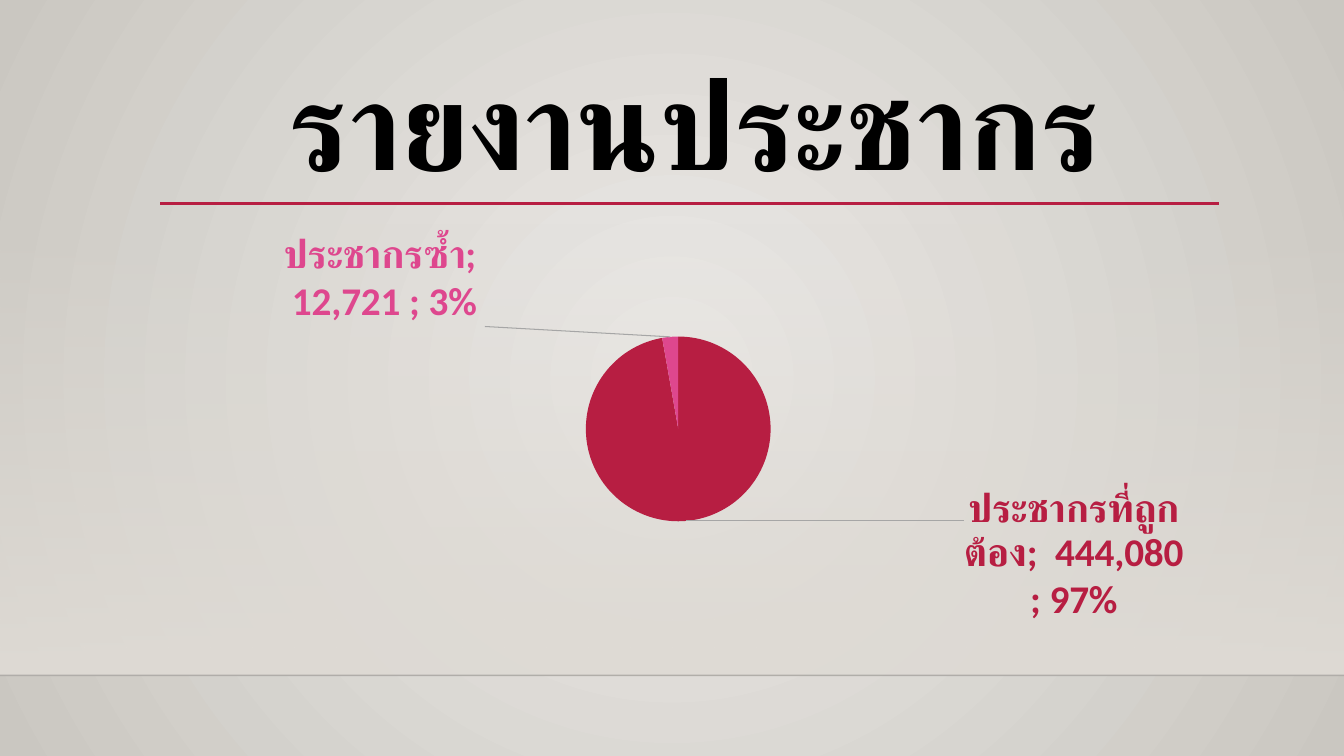
from lxml.etree import SubElement
from pptx import Presentation
from pptx.chart.data import CategoryChartData
from pptx.dml.color import RGBColor
from pptx.enum.chart import XL_CHART_TYPE as ChartType, XL_LABEL_POSITION as LabelPosition
from pptx.enum.shapes import MSO_CONNECTOR as Connector, MSO_SHAPE as Shape
from pptx.enum.text import MSO_ANCHOR as Anchor, MSO_AUTO_SIZE as AutoSize, PP_ALIGN as Align
from pptx.oxml import parse_xml
from pptx.oxml.ns import nsdecls, qn
from pptx.util import Pt

WIDTH, HEIGHT = 960, 540
CRIMSON, PINK, BLACK, GREY = "B71E42", "DE478E", "000000", "A6A6A6"
COUNT_FORMAT = r'_(* #,##0_);_(* \(#,##0\);_(* "-"_);_(@_)'


def colour(hex_text):
    return RGBColor.from_string(hex_text)


def layout_xml(x, y, size=None, inner=False):
    target = '<c:layoutTarget val="inner"/><c:xMode val="edge"/><c:yMode val="edge"/>' if inner else ""
    extent = f'<c:w val="{size[0]}"/><c:h val="{size[1]}"/>' if size else ""
    return parse_xml(
        f'<c:layout {nsdecls("c")}><c:manualLayout>{target}'
        f'<c:x val="{x}"/><c:y val="{y}"/>{extent}</c:manualLayout></c:layout>')


class Deck:
    """Holds the style and the current slide, and adds each kind of element."""

    font = "Calibri"

    def __init__(self):
        self.presentation = Presentation()
        self.presentation.slide_width, self.presentation.slide_height = Pt(WIDTH), Pt(HEIGHT)
        self.slide = self.presentation.slides.add_slide(self.presentation.slide_layouts[5])

    def style(self, font, size, hex_text, bold=True):
        font.name, font.size, font.bold = self.font, Pt(size), bold
        font.color.rgb = colour(hex_text)

    def gradient(self, fill, start, end):
        fill.gradient()
        for position, (stop, hex_text) in enumerate(zip(fill.gradient_stops, (start, end))):
            stop.color.rgb = colour(hex_text)
            stop.position = position

    def background(self, centre, edge):
        self.gradient(self.slide.background.fill, centre, edge)
        gradient = self.slide.background._cSld.find(".//" + qn("a:gradFill"))
        gradient.replace(gradient.find(qn("a:lin")), parse_xml(
            f'<a:path {nsdecls("a")} path="circle">'
            '<a:fillToRect l="50000" t="50000" r="50000" b="50000"/></a:path>'))

    def fade(self, left, top, width, height, hex_text):
        wall = self.slide.shapes.add_shape(
            Shape.RECTANGLE, Pt(left), Pt(top), Pt(width), Pt(height))
        wall.shadow.inherit = False
        wall.line.fill.background()
        self.gradient(wall.fill, hex_text, hex_text)
        gradient = wall._element.spPr.find(qn("a:gradFill"))
        gradient.find(qn("a:lin")).set("ang", "5400000")
        SubElement(gradient.find(qn("a:gsLst"))[0][0], qn("a:alpha")).set("val", "0")

    def rule(self, left, right, y, hex_text, weight, opacity=100):
        line = self.slide.shapes.add_connector(
            Connector.STRAIGHT, Pt(left), Pt(y), Pt(right), Pt(y))
        line.line.color.rgb, line.line.width = colour(hex_text), Pt(weight)
        properties = line._element.spPr
        if opacity < 100:
            SubElement(properties.find(".//" + qn("a:srgbClr")), qn("a:alpha")).set(
                "val", str(opacity * 1000))
        SubElement(properties, qn("a:effectLst"))

    def title(self, text, left, top, width, height):
        heading = self.slide.shapes.title
        heading.left, heading.top, heading.width, heading.height = map(
            Pt, (left, top, width, height))
        frame = heading.text_frame
        frame.text = text
        frame.auto_size, frame.vertical_anchor = AutoSize.NONE, Anchor.TOP
        paragraph = frame.paragraphs[0]
        paragraph.alignment, paragraph.line_spacing = Align.CENTER, 0.9
        self.style(paragraph.font, 88, BLACK)

    def pie(self, slices, left, top, width, height, plot):
        data = CategoryChartData(number_format=COUNT_FORMAT)
        data.categories = [name for name, *_ in slices]
        data.add_series("Series 1", [count for _, count, *_ in slices])
        chart = self.slide.shapes.add_chart(
            ChartType.PIE, Pt(left), Pt(top), Pt(width), Pt(height), data).chart
        chart.has_legend = chart.has_title = False
        self.style(chart.font, 10, BLACK, bold=False)
        area = chart._chartSpace.find(".//" + qn("c:plotArea"))
        for old in area.findall(qn("c:layout")):
            area.remove(old)
        x, y, diameter = plot
        area.insert(0, layout_xml(
            x / width, y / height, (diameter / width, diameter / height), inner=True))
        chart.plots[0].vary_by_categories = True
        series = chart.plots[0].series[0]
        labels = series.data_labels
        labels.show_value = labels.show_category_name = labels.show_percentage = True
        labels.position = LabelPosition.OUTSIDE_END
        self.style(labels.font, 20, CRIMSON)
        for index, (_, _, hex_text, offset, size) in enumerate(slices):
            point = series.points[index]
            point.format.fill.solid()
            point.format.fill.fore_color.rgb = colour(hex_text)
            self.style(point.data_label.font, 28, hex_text)
            point.data_label.position = LabelPosition.OUTSIDE_END
            self.place_label(labels._element.findall(qn("c:dLbl"))[index], offset, size)
        self.leaders(labels._element)

    def leaders(self, labels):
        for old in labels.findall(qn("c:showLeaderLines")):
            labels.remove(old)
        SubElement(labels, qn("c:showLeaderLines")).set("val", "1")
        labels.append(parse_xml(
            f'<c:leaderLines {nsdecls("c", "a")}><c:spPr><a:ln w="{Pt(0.75)}"><a:solidFill>'
            f'<a:srgbClr val="{GREY}"/></a:solidFill></a:ln></c:spPr></c:leaderLines>'))

    def place_label(self, label, offset, size):
        for part in ("showVal", "showCatName", "showPercent"):
            label.find(qn("c:" + part)).set("val", "1")
        label.insert(1, layout_xml(*offset))
        SubElement(label, qn("c:separator")).text = "; "
        extension = SubElement(SubElement(label, qn("c:extLst")), qn("c:ext"))
        extension.set("uri", "{CE6537A1-D6FC-4f65-9D91-7224C49458BB}")
        extension.append(parse_xml(
            '<c15:layout xmlns:c15="http://schemas.microsoft.com/office/drawing/2012/chart" '
            f'{nsdecls("c")}><c:manualLayout><c:w val="{size[0]}"/><c:h val="{size[1]}"/>'
            '</c:manualLayout></c15:layout>'))


def main():
    deck = Deck()
    deck.background("ECEAE7", "CAC7C1")
    deck.fade(0, 159, WIDTH, 323.5, "DFDBD5")
    deck.rule(0, WIDTH, 482.4, "000001", 1, opacity=20)
    deck.rule(114.5, 871, 145.4, CRIMSON, 2.5)
    deck.title("รายงานประชากร", 100, 42.5, 793.5, 83)
    deck.pie(
        [("ประชากรที่ถูกต้อง", 444080, CRIMSON, (0.24, -0.08), (0.19, 0.3)),
         ("ประชากรซ้ำ", 12721, PINK, (-0.16, -0.01), (0.18, 0.22))],
        78.5, 158.4, 825, 322.6, plot=(340, 82, 132))
    deck.presentation.save("out.pptx")


if __name__ == "__main__":
    main()
